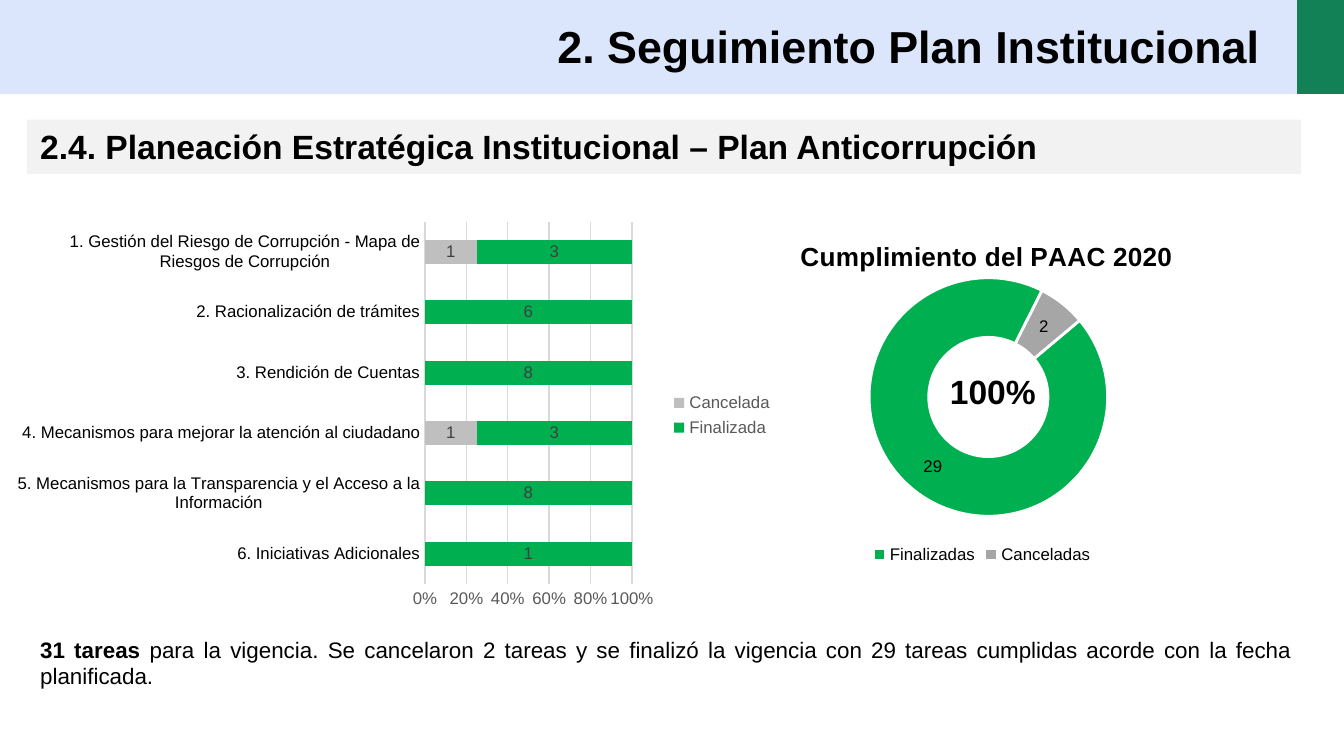
import lxml.etree
import pptx
import pptx.chart.data
import pptx.dml.color
import pptx.enum.chart
import pptx.enum.shapes
import pptx.enum.text
import pptx.oxml.ns
import pptx.util

Pt = pptx.util.Pt
qn = pptx.oxml.ns.qn
ALIGN = pptx.enum.text.PP_ALIGN
CHART = pptx.enum.chart.XL_CHART_TYPE
LEGEND = pptx.enum.chart.XL_LEGEND_POSITION


def color(value):
    return pptx.dml.color.RGBColor.from_string(value)


def set_font(font, size, value="000000", bold=None):
    font.name = "Arial"
    font.size = Pt(size)
    font.color.rgb = color(value)
    font.bold = bold


deck = pptx.Presentation()
deck.slide_width, deck.slide_height = Pt(720), Pt(405)
slide = deck.slides.add_slide(deck.slide_layouts[6])

# Header bands and section background
bands = [
    (694.8, 0, 25.2, 50.4, "138156"),
    (0, 0, 694.8, 50.4, "DBE6FC"),
    (14.4, 64.1, 682.6, 29.1, "F2F2F2"),
]
for left, top, width, height, fill in bands:
    band = slide.shapes.add_shape(
        pptx.enum.shapes.MSO_SHAPE.RECTANGLE, Pt(left), Pt(top), Pt(width), Pt(height))
    band.shadow.inherit = False
    band.fill.solid()
    band.fill.fore_color.rgb = color(fill)
    band.line.fill.background()

# Tasks by component
bar_data = pptx.chart.data.CategoryChartData()
bar_data.categories = [
    "6. Iniciativas Adicionales",
    "5. Mecanismos para la Transparencia y el Acceso a la Información",
    "4. Mecanismos para mejorar la atención al ciudadano",
    "3. Rendición de Cuentas",
    "2. Racionalización de trámites",
    "1. Gestión del Riesgo de Corrupción - Mapa de Riesgos de Corrupción",
]
bar_data.add_series("Cancelada", [None, None, 1, None, None, 1])
bar_data.add_series("Finalizada", [1, 8, 3, 8, 6, 3])
bars = slide.shapes.add_chart(
    CHART.BAR_STACKED_100, Pt(9.4), Pt(114.5), Pt(411.8), Pt(216), bar_data).chart
bars.has_title = False
bars.plots[0].gap_width = 150
bars.plots[0].overlap = 100
for series, fill in zip(bars.plots[0].series, ["BFBFBF", "00B050"]):
    series.format.fill.solid()
    series.format.fill.fore_color.rgb = color(fill)

for axis, text_color in [(bars.category_axis, "000000"), (bars.value_axis, "595959")]:
    axis.major_tick_mark = pptx.enum.chart.XL_TICK_MARK.NONE
    axis.minor_tick_mark = pptx.enum.chart.XL_TICK_MARK.NONE
    set_font(axis.tick_labels.font, 9, text_color)
bars.value_axis.tick_labels.number_format = "0%"
bars.value_axis.tick_labels.number_format_is_linked = False
bars.value_axis.format.line.fill.background()
bars.value_axis.has_major_gridlines = True
for line in [bars.category_axis.format.line, bars.value_axis.major_gridlines.format.line]:
    line.color.rgb = color("D9D9D9")
    line.width = Pt(0.75)

# Overall compliance
ring_data = pptx.chart.data.CategoryChartData()
ring_data.categories = ["Finalizadas", "Canceladas"]
ring_data.add_series("Tareas", [29, 2])
ring = slide.shapes.add_chart(
    CHART.DOUGHNUT, Pt(365), Pt(114.5), Pt(322.6), Pt(190.8), ring_data).chart
ring.has_title = True
title = ring.chart_title.text_frame.paragraphs[0]
title.text = "Cumplimiento del PAAC 2020"
set_font(title.font, 14, bold=True)
ring.plots[0].vary_by_categories = True
for index, fill in enumerate(["00B050", "A6A6A6"]):
    point = ring.plots[0].series[0].points[index]
    point.format.fill.solid()
    point.format.fill.fore_color.rgb = color(fill)
    point.format.line.color.rgb = color("FFFFFF")
    point.format.line.width = Pt(1.5)

# Ring angle, hole and placement of title and plot
for tag, value in [("c:firstSliceAng", 50), ("c:holeSize", 47)]:
    next(ring._chartSpace.iter(qn(tag))).set("val", str(value))
placements = [
    ("c:title", 1, [("xMode", "edge"), ("yMode", "edge"), ("x", 0.19), ("y", 0.06)]),
    ("c:plotArea", 0, [("layoutTarget", "inner"), ("xMode", "edge"), ("yMode", "edge"),
                       ("x", 0.31), ("y", 0.18), ("w", 0.4), ("h", 0.67)]),
]
for tag, position, settings in placements:
    parent = next(ring._chartSpace.iter(qn(tag)))
    for old in parent.findall(qn("c:layout")):
        parent.remove(old)
    layout = lxml.etree.Element(qn("c:layout"))
    manual = lxml.etree.SubElement(layout, qn("c:manualLayout"))
    for name, value in settings:
        lxml.etree.SubElement(manual, qn("c:" + name)).set("val", str(value))
    parent.insert(position, layout)

# Fonts, labels and legends of both charts
for chart, place, legend_color, label_color in [
    (bars, LEGEND.RIGHT, "595959", "404040"),
    (ring, LEGEND.BOTTOM, "000000", "000000"),
]:
    set_font(chart.font, 10)
    chart.has_legend = True
    chart.legend.position = place
    chart.legend.include_in_layout = False
    set_font(chart.legend.font, 9, legend_color)
    chart.plots[0].has_data_labels = True
    labels = chart.plots[0].data_labels
    labels.show_value = True
    labels.show_percentage = False
    set_font(labels.font, 9, label_color)

# Texts: spans are (wording, bold)
texts = [
    (223.2, 6.5, 458.6, 36.3, 24, ALIGN.RIGHT, [("2. Seguimiento Plan Institucional", True)]),
    (14.4, 64.1, 682.6, 29.1, 18, ALIGN.JUSTIFY,
     [("2.4. Planeación Estratégica Institucional – Plan Anticorrupción", True)]),
    (501.8, 195.1, 76.3, 29.1, 18, ALIGN.JUSTIFY, [("100%", True)]),
    (14.4, 337, 685.4, 36.3, 12, ALIGN.JUSTIFY,
     [("31 tareas ", True),
      ("para la vigencia. Se cancelaron 2 tareas y se finalizó la vigencia con 29 tareas "
       "cumplidas acorde con la fecha planificada.", False)]),
]
for left, top, width, height, size, align, spans in texts:
    box = slide.shapes.add_textbox(Pt(left), Pt(top), Pt(width), Pt(height))
    box.text_frame.word_wrap = True
    box.text_frame.auto_size = pptx.enum.text.MSO_AUTO_SIZE.SHAPE_TO_FIT_TEXT
    para = box.text_frame.paragraphs[0]
    para.alignment = align
    set_font(para.font, size)
    for wording, bold in spans:
        span = para.add_run()
        span.text = wording
        span.font.bold = bold

deck.save("out.pptx")
